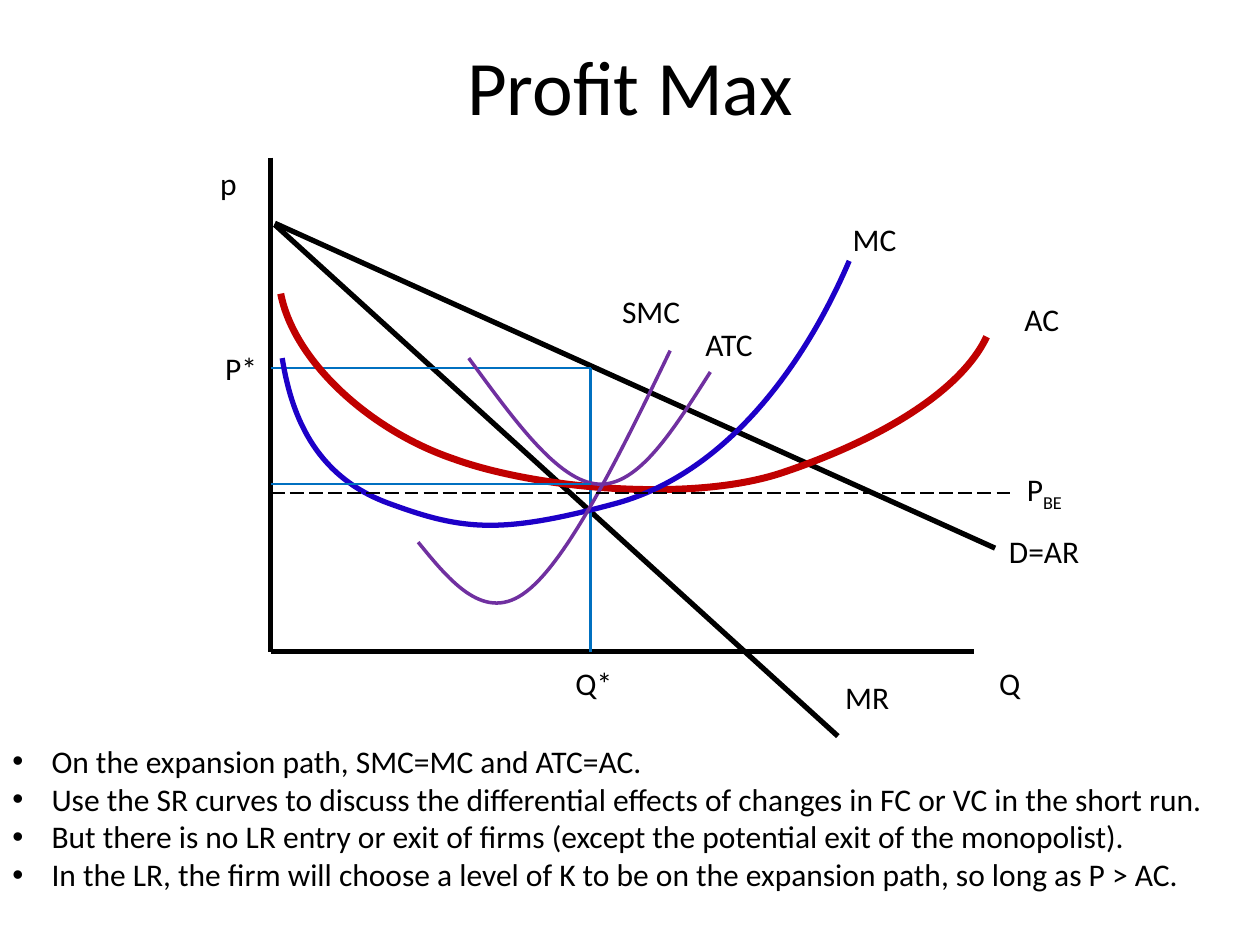
from pptx import Presentation
from pptx.dml.color import RGBColor
from pptx.enum.dml import MSO_LINE
from pptx.enum.shapes import MSO_CONNECTOR
from pptx.enum.text import MSO_ANCHOR, MSO_AUTO_SIZE, PP_ALIGN
from pptx.oxml.ns import qn
from pptx.util import Cm, Pt
from lxml.etree import SubElement

BLACK = RGBColor(0x00, 0x00, 0x00)
RED = RGBColor(0xC0, 0x00, 0x00)
BLUE = RGBColor(0x1D, 0x00, 0xC8)
PURPLE = RGBColor(0x70, 0x30, 0xA0)
GUIDE_BLUE = RGBColor(0x00, 0x70, 0xC0)

# Diagram landmarks in cm from the top of the price axis
AXIS_WIDTH, AXIS_HEIGHT = 14.17, 9.96
OPTIMAL_QUANTITY = 6.45
OPTIMAL_PRICE, AVERAGE_COST, BREAK_EVEN = 4.24, 6.58, 6.76

# Text, left, top, width, subscript
LABELS = [
    ("p", -1.27, 0, 0.86, ""),
    ("Q", 14.43, 10.08, 0.94, ""),
    ("D=AR", 14.63, 7.42, 2.24, ""),
    ("MC", 11.48, 1.14, 1.4, ""),
    ("MR", 11.33, 10.36, 1.52, ""),
    ("Q*", 5.89, 10.08, 1.27, ""),
    ("P*", -1.17, 3.73, 1.17, ""),
    ("AC", 14.94, 2.74, 1.22, ""),
    ("SMC", 6.83, 2.59, 1.7, ""),
    ("ATC", 8.51, 3.25, 1.47, ""),
    ("P", 14.99, 6.17, 1.3, "BE"),
]

# Each curve: start point, then two control points and an end per segment
AC = [(0.2, 2.74), (0.46, 4.09), (1.98, 5.49), (3.68, 6.07),
      (5.36, 6.68), (8.48, 6.96), (10.31, 6.35),
      (12.19, 5.72), (13.89, 4.75), (14.43, 3.61)]
MC = [(0.23, 4.04), (0.43, 5.31), (0.97, 6.48), (2.44, 6.99),
      (3.89, 7.52), (4.67, 7.59), (6.99, 6.96),
      (9.25, 6.32), (10.8, 4.09), (11.66, 2.08)]
ATC = [(3.99, 4.04), (4.9, 5.28), (5.79, 6.53), (6.6, 6.58),
       (7.42, 6.63), (8.13, 5.46), (8.86, 4.32)]
SMC = [(2.97, 7.75), (3.63, 8.56), (4.32, 9.4), (5.16, 8.74),
       (5.99, 8.1), (7.04, 5.99), (8.05, 3.89)]

NOTES = [
    "On the expansion path, SMC=MC and ATC=AC.",
    "Use the SR curves to discuss the differential effects of changes in FC or VC in the short run.",
    "But there is no LR entry or exit of firms (except the potential exit of the monopolist).",
    "In the LR, the firm will choose a level of K to be on the expansion path, so long as P > AC.",
]


def add_text(slide, box, lines, size=18, color=BLACK, align=PP_ALIGN.LEFT,
             anchor=MSO_ANCHOR.TOP, wrap=True, grow=True, bullet=False, subscript=""):
    shape = slide.shapes.add_textbox(*(Cm(value) for value in box))
    frame = shape.text_frame
    frame.word_wrap = wrap
    frame.vertical_anchor = anchor
    frame.auto_size = MSO_AUTO_SIZE.SHAPE_TO_FIT_TEXT if grow else MSO_AUTO_SIZE.NONE
    for index, line in enumerate(lines):
        paragraph = frame.add_paragraph() if index else frame.paragraphs[0]
        paragraph.alignment = align
        for text in filter(None, (line, subscript)):
            run = paragraph.add_run()
            run.text = text
            run.font.name = "Calibri"
            run.font.size = Pt(size)
            run.font.color.rgb = color
        if subscript:
            run.font._element.set("baseline", "-25000")
        if bullet:
            properties = paragraph._p.get_or_add_pPr()
            properties.set("marL", str(Cm(0.79)))
            properties.set("indent", str(-Cm(0.79)))
            SubElement(properties, qn("a:buFont"), typeface="Arial")
            SubElement(properties, qn("a:buChar"), char="•")


def add_line(slide, origin, start, end, color, width, dash=None):
    left, top = origin
    connector = slide.shapes.add_connector(
        MSO_CONNECTOR.STRAIGHT,
        Cm(left + start[0]), Cm(top + start[1]), Cm(left + end[0]), Cm(top + end[1]))
    connector.line.color.rgb = color
    connector.line.width = Pt(width)
    if dash:
        connector.line.dash_style = dash
    SubElement(connector._element.spPr, qn("a:effectLst"))


def add_curve(slide, origin, points, color, width):
    left, top = origin
    start, *others = [(Cm(left + x), Cm(top + y)) for x, y in points]
    builder = slide.shapes.build_freeform(*start)
    builder.add_line_segments(others, close=False)
    shape = builder.convert_to_shape()
    shape.shadow.inherit = False
    shape.fill.background()
    shape.line.color.rgb = color
    shape.line.width = Pt(width)
    # Turn every three straight segments into one cubic Bézier segment
    outline = next(shape._element.iter(qn("a:path")))
    segments = outline.findall(qn("a:lnTo"))
    for index in range(0, len(segments), 3):
        bezier = SubElement(outline, qn("a:cubicBezTo"))
        for segment in segments[index:index + 3]:
            bezier.append(segment[0])
            outline.remove(segment)


def add_title(slide, box):
    add_text(slide, box, ["Profit Max"], size=44, align=PP_ALIGN.CENTER,
             anchor=MSO_ANCHOR.MIDDLE, grow=False)


def add_diagram(slide, origin):
    left, top = origin
    corner = (0, AXIS_HEIGHT)
    optimum = (OPTIMAL_QUANTITY, OPTIMAL_PRICE)

    # Axes, marginal revenue and demand
    for start, end in [((0, 0), corner), ((AXIS_WIDTH, AXIS_HEIGHT), corner),
                       ((0.08, 1.35), (11.43, 11.66)), ((0.08, 1.32), (14.6, 7.87))]:
        add_line(slide, origin, start, end, BLACK, 3)

    # Optimal quantity and price
    add_line(slide, origin, (OPTIMAL_QUANTITY, AXIS_HEIGHT), optimum, GUIDE_BLUE, 1.5)
    add_line(slide, origin, (0, OPTIMAL_PRICE), optimum, GUIDE_BLUE, 1.5)

    # Cost curves
    for points, color, width in [(AC, RED, 4), (MC, BLUE, 3),
                                 (ATC, PURPLE, 2), (SMC, PURPLE, 2)]:
        add_curve(slide, origin, points, color, width)

    # Average cost at the optimum and break-even price
    add_line(slide, origin, (0, AVERAGE_COST), (OPTIMAL_QUANTITY, AVERAGE_COST),
             GUIDE_BLUE, 1.5)
    add_line(slide, origin, (0, BREAK_EVEN), (14.94, BREAK_EVEN), BLACK, 1,
             dash=MSO_LINE.LONG_DASH)

    # Labels
    for text, x, y, width, subscript in LABELS:
        add_text(slide, (left + x, top + y, width, 1.02), [text],
                 wrap=False, subscript=subscript)


def add_notes(slide, box):
    add_text(slide, box, NOTES, bullet=True)


def main():
    presentation = Presentation()
    presentation.slide_width, presentation.slide_height = Cm(25.4), Cm(19.05)
    slide = presentation.slides.add_slide(presentation.slide_layouts[6])
    add_title(slide, (1.27, 0.43, 22.86, 2.54))
    add_diagram(slide, (5.46, 3.18))
    add_notes(slide, (0, 14.83, 25.4, 3.33))
    presentation.save("out.pptx")


if __name__ == "__main__":
    main()
